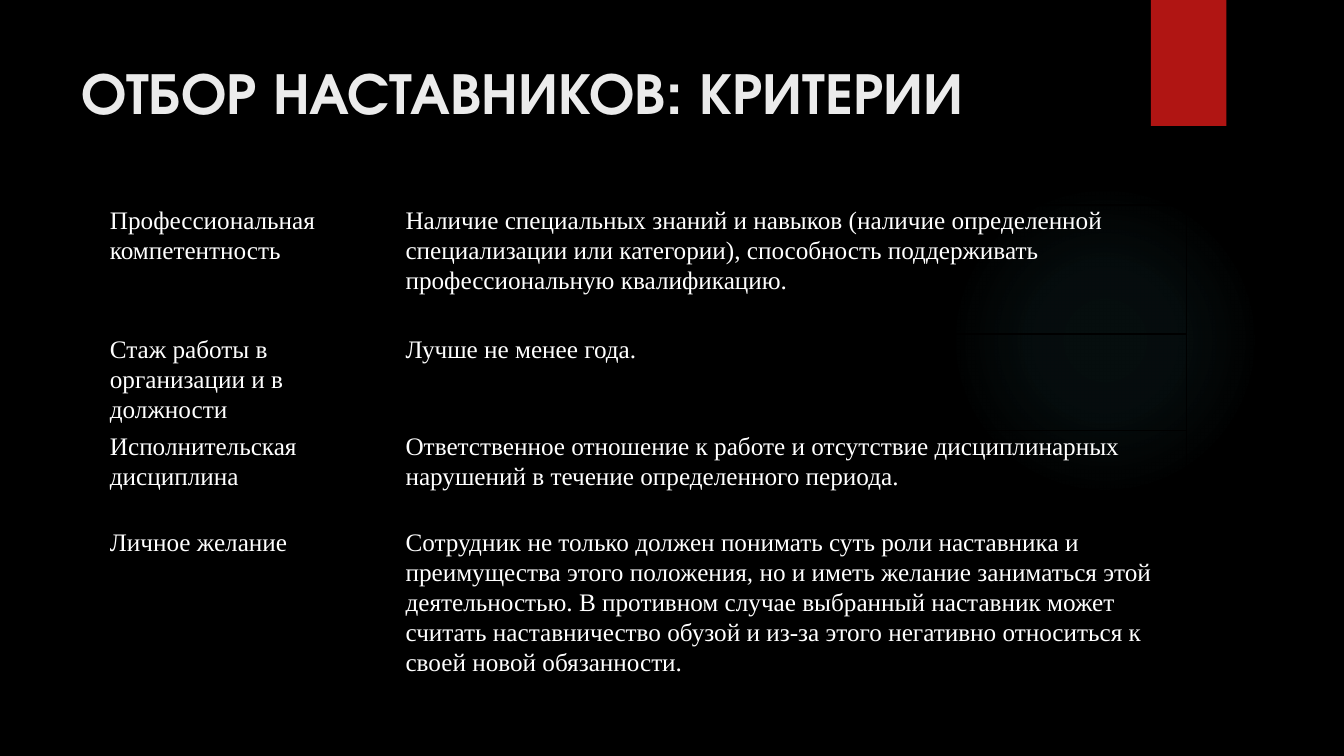
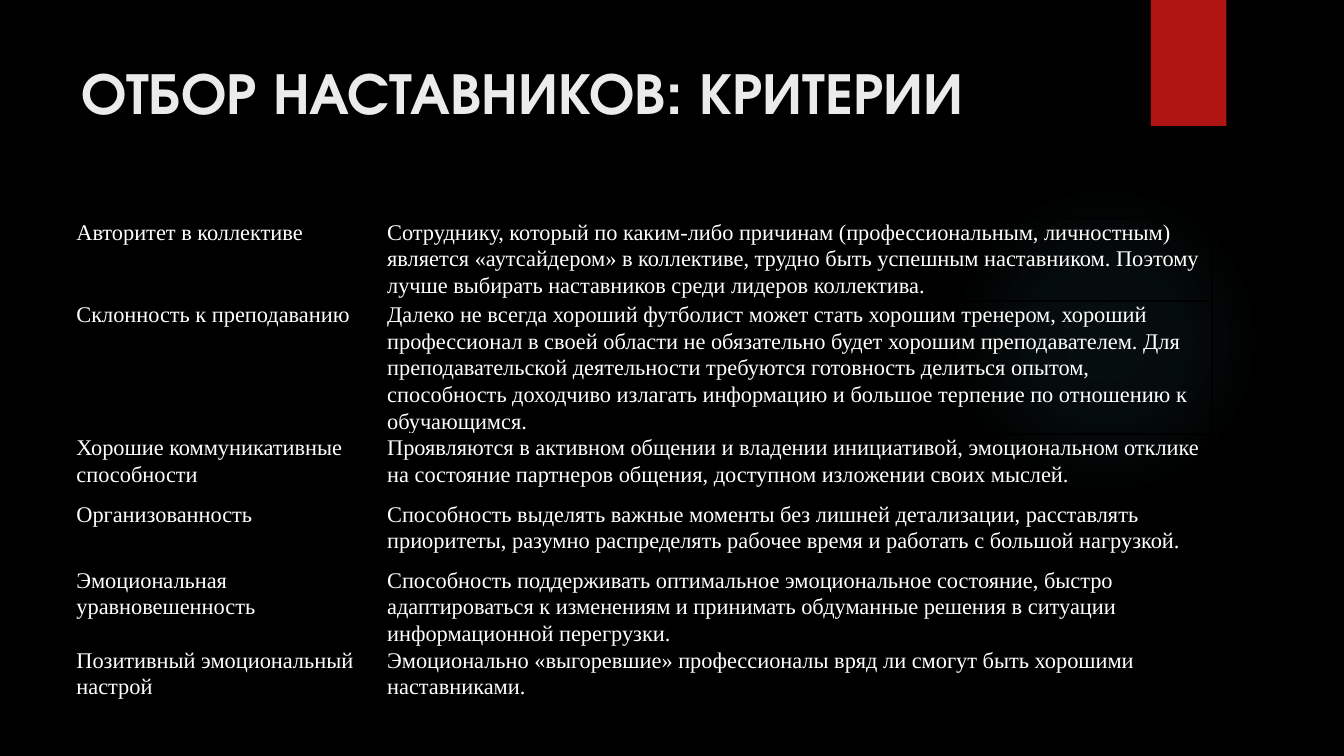
from dataclasses import dataclass

from lxml.etree import SubElement
from pptx import Presentation
from pptx.dml.color import RGBColor as RGB
from pptx.enum.shapes import MSO_SHAPE as Shape
from pptx.enum.text import MSO_ANCHOR as Anchor, PP_ALIGN as Align
from pptx.oxml import parse_xml
from pptx.oxml.ns import nsdecls, qn
from pptx.util import Inches, Pt


@dataclass(frozen=True)
class Theme:
    back: str = "000000"
    glow: str = "50B9C1"
    band: str = "B01513"
    head: str = "EBEBEB"
    text: str = "FFFFFF"
    rule: str = "000000"
    title: str = "TeX Gyre Adventor"
    body: str = "Times New Roman"
    big: int = 42
    mid: int = 18
    small: int = 16
    lead: float = 1.07
    bare: str = "{2D5ABB26-0587-4C30-8999-92F81FD0307C}"


class Deck:
    COLS, ROWS = 160, 90

    def __init__(self, theme):
        self.theme = theme
        self.prs = Presentation()
        self.prs.slide_width = Inches(13.33)
        self.prs.slide_height = Inches(7.5)
        fill = self.prs.slide_master.background.fill
        fill.solid()
        fill.fore_color.rgb = RGB.from_string(theme.back)

    def col(self, n):
        return round(self.prs.slide_width * n / self.COLS)

    def row(self, n):
        return round(self.prs.slide_height * n / self.ROWS)

    def box(self, x, y, w, h):
        return self.col(x), self.row(y), self.col(w), self.row(h)

    def page(self, title):
        self.slide = self.prs.slides.add_slide(self.prs.slide_layouts[5])
        self.glow()
        self.band()
        self.head(title)

    def shape(self, kind, *area):
        item = self.slide.shapes.add_shape(kind, *self.box(*area))
        item.shadow.inherit = False
        item.line.fill.background()
        return item

    def glow(self):
        item = self.shape(Shape.OVAL, 113, 22, 37, 37)
        item.fill.background()
        stops = "".join(
            f'<a:gs pos="{pos * 1000}"><a:srgbClr val="{self.theme.glow}">'
            f'<a:alpha val="{alpha * 1000}"/></a:srgbClr></a:gs>'
            for pos, alpha in ((0, 7), (36, 6), (69, 0)))
        grad = parse_xml(
            f'<a:gradFill {nsdecls("a")} rotWithShape="1"><a:gsLst>{stops}</a:gsLst>'
            '<a:path path="circle"><a:fillToRect l="50000" t="50000" r="50000" b="50000"/>'
            '</a:path></a:gradFill>')
        props = item._element.spPr
        props.replace(props.find(qn("a:noFill")), grad)

    def band(self):
        item = self.shape(Shape.RECTANGLE, 137, 0, 9, 15)
        item.fill.solid()
        item.fill.fore_color.rgb = RGB.from_string(self.theme.band)

    def font(self, para, name, size, color, bold=False):
        font = para.font
        font.name, font.size, font.bold = name, Pt(size), bold
        font.color.rgb = RGB.from_string(color)

    def head(self, text):
        item = self.slide.shapes.title
        item.left, item.top, item.width, item.height = self.box(8.5, 6, 123.5, 18.4)
        frame = item.text_frame
        frame.text = text
        frame.word_wrap = True
        frame.vertical_anchor = Anchor.TOP
        para = frame.paragraphs[0]
        para.alignment = Align.LEFT
        self.font(para, self.theme.title, self.theme.big, self.theme.head, True)

    def edge(self, cell):
        props = cell._tc.get_or_add_tcPr()
        for side in "LRTB":
            line = SubElement(props, qn(f"a:ln{side}"), w=str(Pt(1)))
            fill = SubElement(line, qn("a:solidFill"))
            SubElement(fill, qn("a:srgbClr"), val=self.theme.rule)

    def cell(self, cell, text, size, pad):
        cell.text = text
        cell.margin_left = cell.margin_right = self.col(pad)
        cell.margin_top = cell.margin_bottom = 0
        cell.vertical_anchor = Anchor.TOP
        self.edge(cell)
        cell.fill.background()
        para = cell.text_frame.paragraphs[0]
        para.line_spacing = self.theme.lead
        self.font(para, self.theme.body, size, self.theme.text)

    def table(self, x, y, cols, rows, data, size, pad):
        area = self.box(x, y, sum(cols), sum(rows))
        table = self.slide.shapes.add_table(len(rows), len(cols), *area).table
        table.first_row = table.horz_banding = False
        table._tbl.tblPr.find(qn("a:tableStyleId")).text = self.theme.bare
        for col, width in zip(table.columns, cols):
            col.width = self.col(width)
        for row, height, texts in zip(table.rows, rows, data):
            row.height = self.row(height)
            for cell, text in zip(row.cells, texts):
                self.cell(cell, text, size, pad)


TITLE = "ОТБОР НАСТАВНИКОВ: КРИТЕРИИ"

SKILLS = [
    ("Профессиональная компетентность",
     "Наличие специальных знаний и навыков (наличие определенной специализации "
     "или категории), способность поддерживать профессиональную квалификацию."),
    ("Стаж работы в организации и в должности",
     "Лучше не менее года."),
    ("Исполнительская дисциплина",
     "Ответственное отношение к работе и отсутствие дисциплинарных нарушений "
     "в течение определенного периода."),
    ("Личное желание",
     "Сотрудник не только должен понимать суть роли наставника и преимущества "
     "этого положения, но и иметь желание заниматься этой деятельностью. "
     "В противном случае выбранный наставник может считать наставничество обузой "
     "и из-за этого негативно относиться к своей новой обязанности."),
]

TRAITS = [
    ("Авторитет в коллективе",
     "Сотруднику, который по каким-либо причинам (профессиональным, личностным) "
     "является «аутсайдером» в коллективе, трудно быть успешным наставником. "
     "Поэтому лучше выбирать наставников среди лидеров коллектива."),
    ("Склонность к преподаванию",
     "Далеко не всегда хороший футболист может стать хорошим тренером, хороший "
     "профессионал в своей области не обязательно будет хорошим преподавателем. "
     "Для преподавательской деятельности требуются готовность делиться опытом, "
     "способность доходчиво излагать информацию и большое терпение по отношению "
     "к обучающимся."),
    ("Хорошие коммуникативные способности",
     "Проявляются в активном общении и владении инициативой, эмоциональном отклике "
     "на состояние партнеров общения, доступном изложении своих мыслей."),
    ("Организованность",
     "Способность выделять важные моменты без лишней детализации, расставлять "
     "приоритеты, разумно распределять рабочее время и работать с большой нагрузкой."),
    ("Эмоциональная уравновешенность",
     "Способность поддерживать оптимальное эмоциональное состояние, быстро "
     "адаптироваться к изменениям и принимать обдуманные решения в ситуации "
     "информационной перегрузки."),
    ("Позитивный эмоциональный настрой",
     "Эмоционально «выгоревшие» профессионалы вряд ли смогут быть хорошими "
     "наставниками."),
]


def main():
    theme = Theme()
    deck = Deck(theme)
    deck.page(TITLE)
    deck.table(12.25, 24.4, (35.2, 93.8), [3.84 * n for n in (4, 3, 3, 6)],
               SKILLS, theme.mid, 0.84)
    deck.page(TITLE)
    deck.table(8.5, 26, (37, 98.8), [9.84, 15.72] + [7.9] * 3 + [5.9],
               TRAITS, theme.small, 0.6)
    deck.prs.save("out.pptx")


if __name__ == "__main__":
    main()
